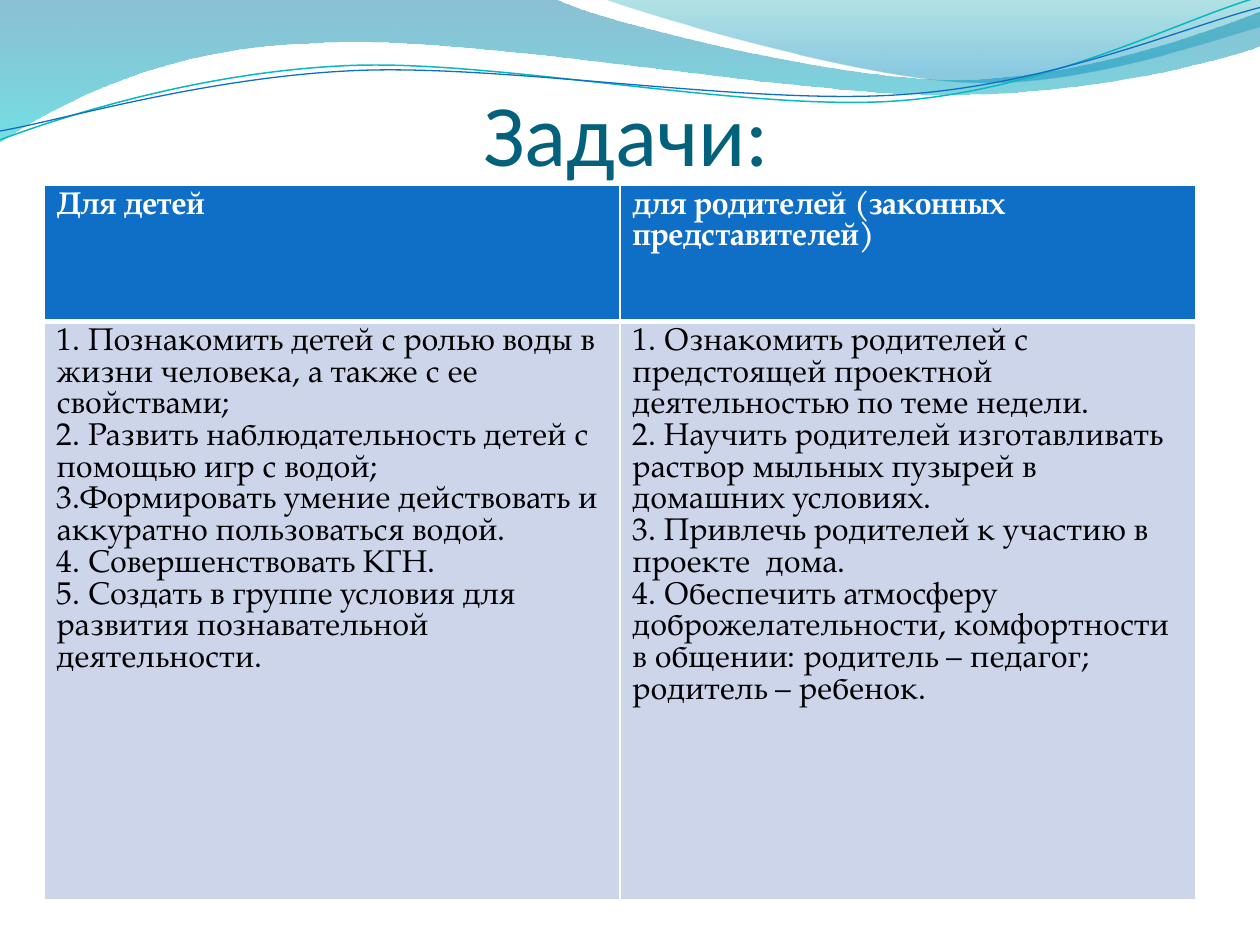
from math import cos, radians, sin

from lxml import etree
from pptx import Presentation
from pptx.dml.color import RGBColor
from pptx.enum.text import MSO_ANCHOR, MSO_AUTO_SIZE, PP_ALIGN
from pptx.oxml import parse_xml
from pptx.oxml.ns import nsdecls, qn
from pptx.util import Inches, Pt

WHITE = RGBColor(0xFF, 0xFF, 0xFF)
BLACK = RGBColor(0, 0, 0)
BLUE = RGBColor(0x0F, 0x6F, 0xC6)
TEAL = RGBColor(0x0A, 0xB8, 0xBF)
TITLE_COLOR = RGBColor(0x04, 0x61, 0x7B)
BODY_FILL = RGBColor(0xCC, 0xD5, 0xEA)
DEEP_BLUE = RGBColor(0x00, 0x74, 0xA1)
CYAN = RGBColor(0x00, 0xC6, 0xCF)
SEA_GREEN = RGBColor(0x00, 0xA1, 0xA9)
SKY_BLUE = RGBColor(0x00, 0x8B, 0xBF)

LINE_TILT = -2.7

# Outlines: a start point, then line ends (2 numbers) or Bezier curves (6 numbers).
# Gradient stops: position %, colour, opacity %.
WAVES = [
    ([(0, 0), (4.4, -0.01), (4.76, 0.17, 6.64, 0.63, 7.58, 0.63),
      (8.53, 0.63, 9.58, 0.26, 10, 0.09), (10.01, 0.36),
      (9.83, 0.44, 8.7, 0.76, 7.46, 0.75), (6.22, 0.75, 3.82, 0.28, 2.57, 0.34),
      (1.29, 0.36, 0.46, 0.83, -0.01, 1.13), (0, 0)],
     [(0, DEEP_BLUE, 45), (100, CYAN, 55)]),
    ([(4.79, -0.01), (5.09, 0.11, 6.82, 0.62, 7.69, 0.65),
      (8.56, 0.69, 9.61, 0.32, 10, 0.21), (10, 0), (4.79, -0.01)],
     [(0, SEA_GREEN, 30), (80, SKY_BLUE, 45)]),
]
# Outline as it lies on the slide, centre of its tilt, colour, width.
WAVE_LINES = [
    ([(0, 1.11), (0.48, 0.93, 1.58, 0.57, 2.77, 0.52),
      (3.95, 0.47, 5.93, 0.89, 7.13, 0.8), (8.33, 0.71, 9.38, 0.15, 9.98, -0.02)],
     (4.99, 0.58), TEAL, 0.85),
    ([(0, 1.04), (0.47, 0.96, 1.64, 0.61, 2.83, 0.56),
      (4.03, 0.51, 5.97, 0.84, 7.17, 0.75), (8.36, 0.67, 9.41, 0.21, 10, 0.06)],
     (5, 0.59), BLUE, 0.75),
]

HEADERS = ["Для детей", "для родителей (законных представителей)"]
TASKS = [
    ["1. Познакомить детей с ролью воды в жизни человека, а также с ее свойствами;",
     "2. Развить наблюдательность детей с помощью игр с водой;",
     "3.Формировать умение действовать и аккуратно пользоваться водой.",
     "4. Совершенствовать КГН.",
     "5. Создать в группе условия для развития познавательной деятельности."],
    ["1. Ознакомить родителей с предстоящей проектной деятельностью по теме недели.",
     "2. Научить родителей изготавливать раствор мыльных пузырей в домашних условиях.",
     "3. Привлечь родителей к участию в проекте  дома.",
     "4. Обеспечить атмосферу доброжелательности, комфортности в общении: "
     "родитель – педагог; родитель – ребенок."],
]


def set_attrs(obj, values):
    for name, value in values.items():
        setattr(obj, name, value)


def add_run(p, text, color, **font):
    r = p.add_run()
    r.text = text
    set_attrs(r.font, font)
    r.font.color.rgb = color


def pairs(segment):
    return list(zip(segment[::2], segment[1::2]))


def rotate(segment, center, angle):
    """Turn the points of a segment clockwise about a centre."""
    cx, cy = center
    c, s = cos(radians(angle)), sin(radians(angle))
    turned = []
    for x, y in pairs(segment):
        dx, dy = x - cx, y - cy
        turned += [cx + dx * c - dy * s, cy + dx * s + dy * c]
    return tuple(turned)


def add_outline(shapes, outline, close):
    """Build a freeform through all points, then join each curve's three points."""
    points = [(Inches(x), Inches(y)) for segment in outline for x, y in pairs(segment)]
    builder = shapes.build_freeform(*points[0])
    builder.add_line_segments(points[1:], close=close)
    sp = builder.convert_to_shape()
    sp.shadow.inherit = False
    steps = iter(list(sp._element.iter(qn("a:lnTo"))))
    for segment in outline[1:]:
        step = next(steps)
        if len(segment) == 6:
            step.tag = qn("a:cubicBezTo")
            for _ in range(2):
                extra = next(steps)
                step.append(extra[0])
                extra.getparent().remove(extra)
    return sp


def add_wave(shapes, outline, stops):
    sp = add_outline(shapes, outline, True)
    sp.line.fill.background()
    stop_xml = "".join(
        f'<a:gs pos="{pos * 1000}"><a:srgbClr val="{color}">'
        f'<a:alpha val="{opacity * 1000}"/></a:srgbClr></a:gs>'
        for pos, color, opacity in stops)
    gradient = parse_xml(
        f'<a:gradFill {nsdecls("a")} rotWithShape="1"><a:gsLst>{stop_xml}</a:gsLst>'
        '<a:lin ang="5400000" scaled="0"/></a:gradFill>')
    sp._element.spPr.find(qn("a:custGeom")).addnext(gradient)


def add_wave_line(shapes, outline, center, color, width):
    level = [rotate(segment, center, -LINE_TILT) for segment in outline]
    sp = add_outline(shapes, level, False)
    sp.rotation = LINE_TILT
    sp.fill.background()
    sp.line.color.rgb = color
    sp.line.width = Pt(width)


def add_title(slide, text):
    title = slide.shapes.title
    slide.shapes._spTree.append(title._element)  # in front of the waves
    set_attrs(title, dict(left=Inches(0.43), top=Inches(0.21),
                          width=Inches(9.08), height=Inches(1.25)))
    tf = title.text_frame
    set_attrs(tf, dict(margin_left=0, margin_top=Inches(0.05), margin_right=0,
                       margin_bottom=0, vertical_anchor=MSO_ANCHOR.BOTTOM,
                       word_wrap=True, auto_size=MSO_AUTO_SIZE.NONE))
    p = tf.paragraphs[0]
    p.alignment = PP_ALIGN.CENTER
    add_run(p, text, TITLE_COLOR, size=Pt(50), name="Calibri")


def set_borders(cell, **widths):
    """Draw white borders; keys are the sides L, R, T, B and values are points."""
    tcPr = cell._tc.get_or_add_tcPr()
    for i, (side, width) in enumerate(widths.items()):
        ln = etree.Element(qn(f"a:ln{side}"), w=str(Pt(width)))
        fill = etree.SubElement(ln, qn("a:solidFill"))
        etree.SubElement(fill, qn("a:srgbClr"), val=str(WHITE))
        tcPr.insert(i, ln)


def fill_cell(cell, lines, fill, color, bold):
    cell.fill.solid()
    cell.fill.fore_color.rgb = fill
    tf = cell.text_frame
    for i, line in enumerate(lines):
        p = tf.paragraphs[0] if i == 0 else tf.add_paragraph()
        add_run(p, line, color, size=Pt(18), name="TeX Gyre Pagella", bold=bold)


def add_task_table(slide):
    table = slide.shapes.add_table(2, 2, Inches(0.35), Inches(1.47),
                                   Inches(9.14), Inches(5.67)).table
    for row, height in zip(table.rows, (1.08, 4.59)):
        row.height = Inches(height)
    for col, (header, tasks) in enumerate(zip(HEADERS, TASKS)):
        head, body = table.cell(0, col), table.cell(1, col)
        fill_cell(head, [header], BLUE, WHITE, True)
        set_borders(head, L=1, R=1, T=1, B=3)
        fill_cell(body, tasks, BODY_FILL, BLACK, False)
        set_borders(body, L=1, R=1, T=3, B=1)


def main():
    prs = Presentation()
    prs.slide_width, prs.slide_height = Inches(10), Inches(7.5)
    slide = prs.slides.add_slide(prs.slide_layouts[5])
    for wave in WAVES:
        add_wave(slide.shapes, *wave)
    group = slide.shapes.add_group_shape()
    for wave_line in WAVE_LINES:
        add_wave_line(group.shapes, *wave_line)
    add_title(slide, "Задачи:")
    add_task_table(slide)
    prs.save("out.pptx")


if __name__ == "__main__":
    main()
